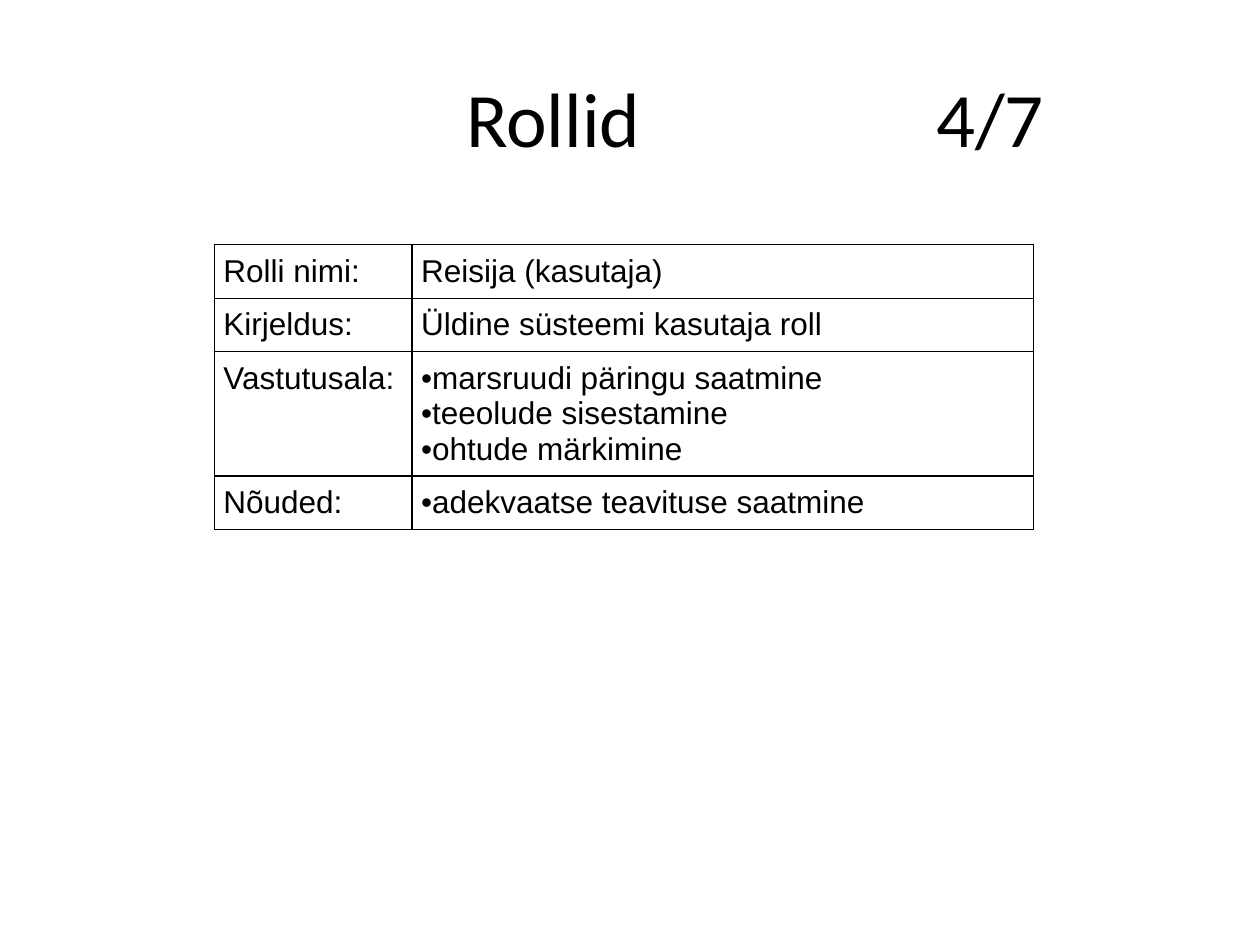
from dataclasses import dataclass

from lxml import etree
from pptx import Presentation
from pptx.dml.color import RGBColor
from pptx.enum.text import MSO_ANCHOR, PP_ALIGN
from pptx.oxml.ns import qn
from pptx.util import Inches, Pt

MIDDLE, TOP, LEFT = MSO_ANCHOR.MIDDLE, MSO_ANCHOR.TOP, PP_ALIGN.LEFT

TITLE = "\tRollid\t4/7"
ROLE_ROWS = [
    ("Rolli nimi:", "Reisija (kasutaja)"),
    ("Kirjeldus:", "Üldine süsteemi kasutaja roll"),
    ("Vastutusala:", ["marsruudi päringu saatmine", "teeolude sisestamine", "ohtude märkimine"]),
    ("Nõuded:", ["adekvaatse teavituse saatmine"]),
]


@dataclass(frozen=True)
class Theme:
    ink: str = "000000"
    title_font: str = "Calibri"
    body_font: str = "Arial"
    title_size: int = 44
    body_size: int = 18
    border: float = 0.75


THEME = Theme()
SLIDE_WIDTH, SLIDE_HEIGHT = 10, 7.5
TITLE_BOX = (0.5, 0.3, 9, 1.25)
TITLE_TABS = (3.1, 6.83)
TABLE_LEFT, TABLE_TOP = 1.7, 1.94
COLUMN_WIDTHS = (1.57, 4.93)
CELL_MARGIN = Pt(5.25)
LINE_HEIGHT = Inches(0.28)


def write_text(paragraph, text, *, font, size, bullet=False, tabs=()):
    properties = paragraph._p.get_or_add_pPr()
    if bullet:
        etree.SubElement(properties, qn("a:buFont"), typeface=font)
        etree.SubElement(properties, qn("a:buChar"), char="•")
    if tabs:
        tab_list = etree.SubElement(properties, qn("a:tabLst"))
        for position in tabs:
            etree.SubElement(tab_list, qn("a:tab"), pos=str(Inches(position)), algn="l")
    paragraph.alignment = LEFT
    run = paragraph.add_run()
    run.text = text
    run.font.name = font
    run.font.size = Pt(size)
    run.font.color.rgb = RGBColor.from_string(THEME.ink)


def draw_borders(cell):
    properties = cell._tc.get_or_add_tcPr()
    for index, side in enumerate(("a:lnL", "a:lnR", "a:lnT", "a:lnB")):
        line = etree.Element(qn(side), w=str(Pt(THEME.border)))
        fill = etree.SubElement(line, qn("a:solidFill"))
        etree.SubElement(fill, qn("a:srgbClr"), val=THEME.ink)
        properties.insert(index, line)


def fill_cell(cell, content):
    cell.fill.background()
    cell.vertical_anchor = TOP
    cell.margin_left = cell.margin_right = CELL_MARGIN
    cell.margin_top = cell.margin_bottom = CELL_MARGIN
    bulleted = isinstance(content, list)
    frame = cell.text_frame
    for index, text in enumerate(content if bulleted else [content]):
        paragraph = frame.add_paragraph() if index else frame.paragraphs[0]
        write_text(paragraph, text, font=THEME.body_font, size=THEME.body_size, bullet=bulleted)
    draw_borders(cell)


def add_title(slide):
    title = slide.shapes.title
    title.left, title.top, title.width, title.height = map(Inches, TITLE_BOX)
    title.text_frame.vertical_anchor = MIDDLE
    write_text(title.text_frame.paragraphs[0], TITLE, font=THEME.title_font,
               size=THEME.title_size, tabs=TITLE_TABS)


def add_role_table(slide):
    line_counts = [len(value) if isinstance(value, list) else 1 for _, value in ROLE_ROWS]
    heights = [count * LINE_HEIGHT + 2 * CELL_MARGIN for count in line_counts]
    frame = slide.shapes.add_table(
        len(ROLE_ROWS), len(COLUMN_WIDTHS), Inches(TABLE_LEFT), Inches(TABLE_TOP),
        Inches(sum(COLUMN_WIDTHS)), sum(heights))
    table = frame.table
    table.first_row = table.horz_banding = False
    for column, width in zip(table.columns, COLUMN_WIDTHS):
        column.width = Inches(width)
    for row, height, contents in zip(table.rows, heights, ROLE_ROWS):
        row.height = height
        for cell, content in zip(row.cells, contents):
            fill_cell(cell, content)


def main():
    presentation = Presentation()
    presentation.slide_width = Inches(SLIDE_WIDTH)
    presentation.slide_height = Inches(SLIDE_HEIGHT)
    slide = presentation.slides.add_slide(presentation.slide_layouts[5])
    add_title(slide)
    add_role_table(slide)
    presentation.save("out.pptx")


if __name__ == "__main__":
    main()
